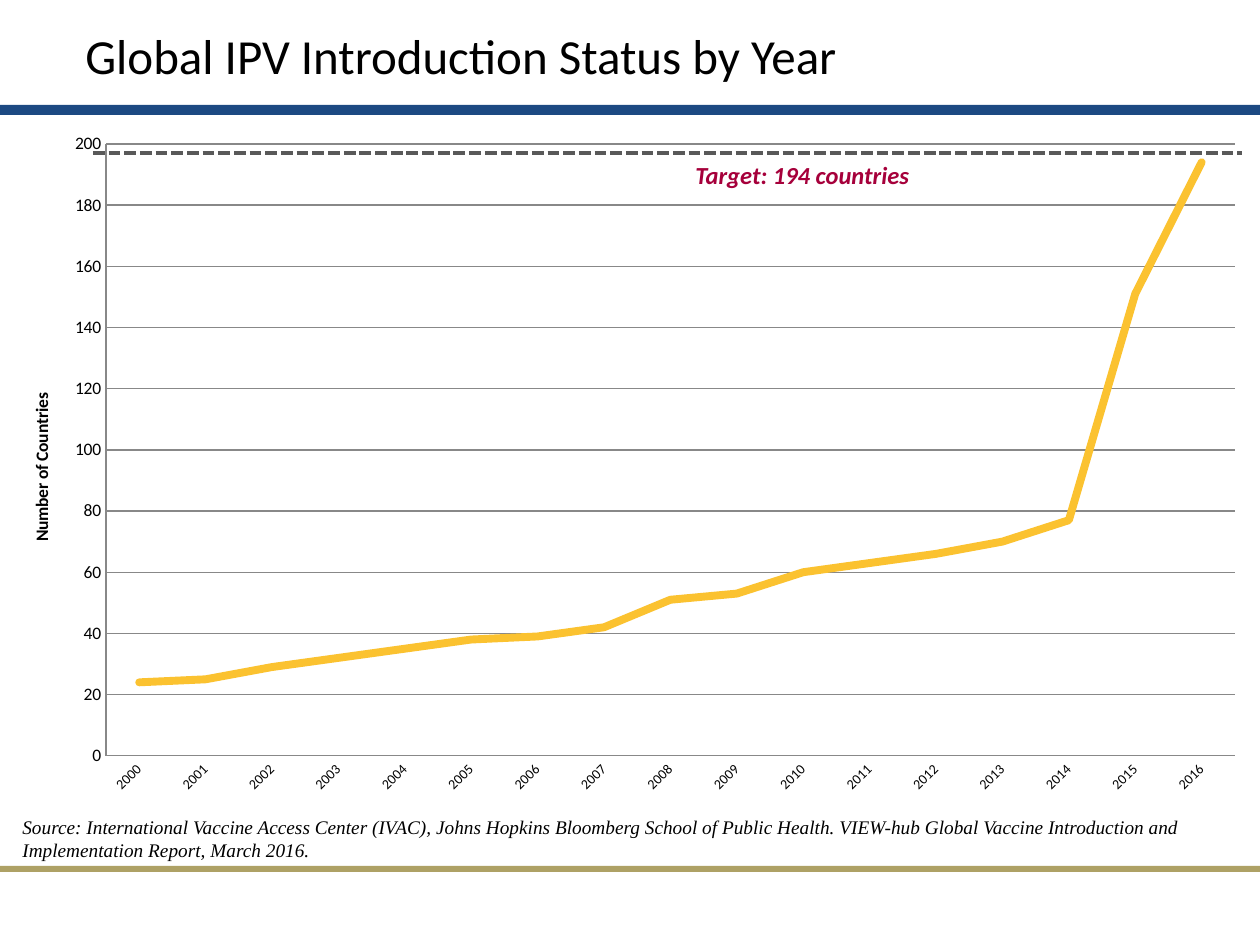
import pptx
import pptx.util
import pptx.chart.data
import pptx.dml.color
import pptx.enum.chart
import pptx.enum.dml
import pptx.enum.shapes
import pptx.oxml
import pptx.oxml.ns

RGB = pptx.dml.color.RGBColor
BLACK = RGB(0x00, 0x00, 0x00)
NAVY = RGB(0x1C, 0x49, 0x82)
GOLD = RGB(0x84, 0x70, 0x13)
AMBER = RGB(0xFB, 0xC2, 0x30)
GREY = RGB(0x88, 0x88, 0x88)
DARK = RGB(0x59, 0x59, 0x59)
RED = RGB(0xA6, 0x00, 0x3B)

# Content: boxes are left, top, width, height in px
YEARS = [str(year) for year in range(2000, 2017)]
COUNTS = [24, 25, 29, 32, 35, 38, 39, 42, 51, 53, 60, 63, 66, 70, 77, 151, 194]
BARS = [((0, 105, 1260, 10), NAVY, None), ((0, 866, 1260, 6), GOLD, 65)]
TEXTS = [
    ("Global IPV Introduction Status by Year", (73, 19, 1187, 116),
     dict(name="Calibri", size=28, color=BLACK)),
    ("Source: International Vaccine Access Center (IVAC), Johns Hopkins Bloomberg "
     "School of Public Health. VIEW-hub Global Vaccine Introduction and "
     "Implementation Report, March 2016.", (10, 809, 1227, 59),
     dict(name="Times New Roman", size=11, color=BLACK, italic=True)),
    ("Target: 194 countries", (683, 154, 324, 42),
     dict(name="Calibri", size=14, color=RED, bold=True, italic=True)),
]
CHART = (-3, 121, 1263, 688)
PLOT = (106, 144, 1129, 612)
LABEL = (27, 390)
TARGET = (93, 153, 1242, 153)
SCALE = 914400 // 126


def emu(box):
    return [pptx.util.Emu(v * SCALE) for v in box]


def style(font, form):
    for key, val in form.items():
        if key == "color":
            font.color.rgb = val
        else:
            setattr(font, key, pptx.util.Pt(val) if key == "size" else val)


def stroke(line, color, width):
    line.color.rgb = color
    line.width = pptx.util.Pt(width)


def place(node, spot, index, inner=False):
    """Fix a chart part at a px spot, as fractions of the chart."""
    for old in node.findall(pptx.oxml.ns.qn("c:layout")):
        node.remove(old)
    left, top, wide, high = CHART
    parts = [("x", (spot[0] - left) / wide), ("y", (spot[1] - top) / high)]
    if inner:
        parts += [("w", spot[2] / wide), ("h", spot[3] / high)]
    xml = '<c:layoutTarget val="inner"/>' if inner else ""
    xml += "".join(f'<c:{key}Mode val="edge"/>' for key in "xy")
    xml += "".join(f'<c:{key} val="{val:.4f}"/>' for key, val in parts)
    node.insert(index, pptx.oxml.parse_xml(
        f'<c:layout {pptx.oxml.ns.nsdecls("c")}><c:manualLayout>{xml}'
        '</c:manualLayout></c:layout>'))


def turn(node, angle):
    body = node.find(".//" + pptx.oxml.ns.qn("a:bodyPr"))
    body.set("rot", str(angle * 60000))
    body.set("vert", "horz")


def add_bar(slide, box, color, alpha):
    bar = slide.shapes.add_shape(pptx.enum.shapes.MSO_SHAPE.RECTANGLE, *emu(box))
    bar.shadow.inherit = False
    bar.fill.solid()
    bar.fill.fore_color.rgb = color
    bar.line.fill.background()
    if alpha:
        tint = bar.fill._xPr.find(".//" + pptx.oxml.ns.qn("a:srgbClr"))
        tint.append(pptx.oxml.parse_xml(
            f'<a:alpha {pptx.oxml.ns.nsdecls("a")} val="{alpha * 1000}"/>'))


def add_text(slide, text, box, form):
    frame = slide.shapes.add_textbox(*emu(box)).text_frame
    frame.word_wrap = True
    run = frame.paragraphs[0].add_run()
    run.text = text
    style(run.font, form)


def add_chart(slide):
    data = pptx.chart.data.CategoryChartData()
    data.categories = YEARS
    data.add_series("Series 1", COUNTS)
    chart = slide.shapes.add_chart(
        pptx.enum.chart.XL_CHART_TYPE.LINE, *emu(CHART), data).chart
    chart.has_legend = chart.has_title = False
    style(chart.font, dict(name="Calibri", size=10, color=BLACK))
    plot = chart.plots[0]
    plot.vary_by_categories = False
    series = plot.series[0]
    series.smooth = False
    series.marker.style = pptx.enum.chart.XL_MARKER_STYLE.NONE
    stroke(series.format.line, AMBER, 4.5)
    series.format.line._get_or_add_ln().set("cap", "rnd")

    # Axes
    cat, val = chart.category_axis, chart.value_axis
    for axis, size in ((cat, 8), (val, 10)):
        axis.major_tick_mark = pptx.enum.chart.XL_TICK_MARK.NONE
        stroke(axis.format.line, GREY, 0.75)
        style(axis.tick_labels.font, dict(name="Calibri", size=size, color=BLACK))
    turn(cat._element.txPr.getparent(), -45)
    val.minimum_scale, val.maximum_scale, val.major_unit = 0, 200, 20
    val.has_major_gridlines = True
    stroke(val.major_gridlines.format.line, GREY, 0.75)

    # Axis title and plot position
    title = val.axis_title
    title.text_frame.text = "Number of Countries"
    style(title.text_frame.paragraphs[0].runs[0].font,
          dict(name="Calibri", size=10, color=BLACK, bold=True))
    turn(title._element, -90)
    place(title._element, LABEL, 1)
    place(chart._chartSpace.chart.plotArea, PLOT, 0, inner=True)


def add_target(slide):
    line = slide.shapes.add_connector(
        pptx.enum.shapes.MSO_CONNECTOR.STRAIGHT, *emu(TARGET))
    stroke(line.line, DARK, 2.25)
    line.line.dash_style = pptx.enum.dml.MSO_LINE.SQUARE_DOT
    line._element.spPr.append(pptx.oxml.parse_xml(
        f'<a:effectLst {pptx.oxml.ns.nsdecls("a")}/>'))


def main():
    deck = pptx.Presentation()
    deck.slide_width, deck.slide_height = emu((1260, 945))
    slide = deck.slides.add_slide(deck.slide_layouts[6])
    for bar in BARS:
        add_bar(slide, *bar)
    add_chart(slide)
    add_target(slide)
    for text in TEXTS:
        add_text(slide, *text)
    deck.save("out.pptx")


if __name__ == "__main__":
    main()
